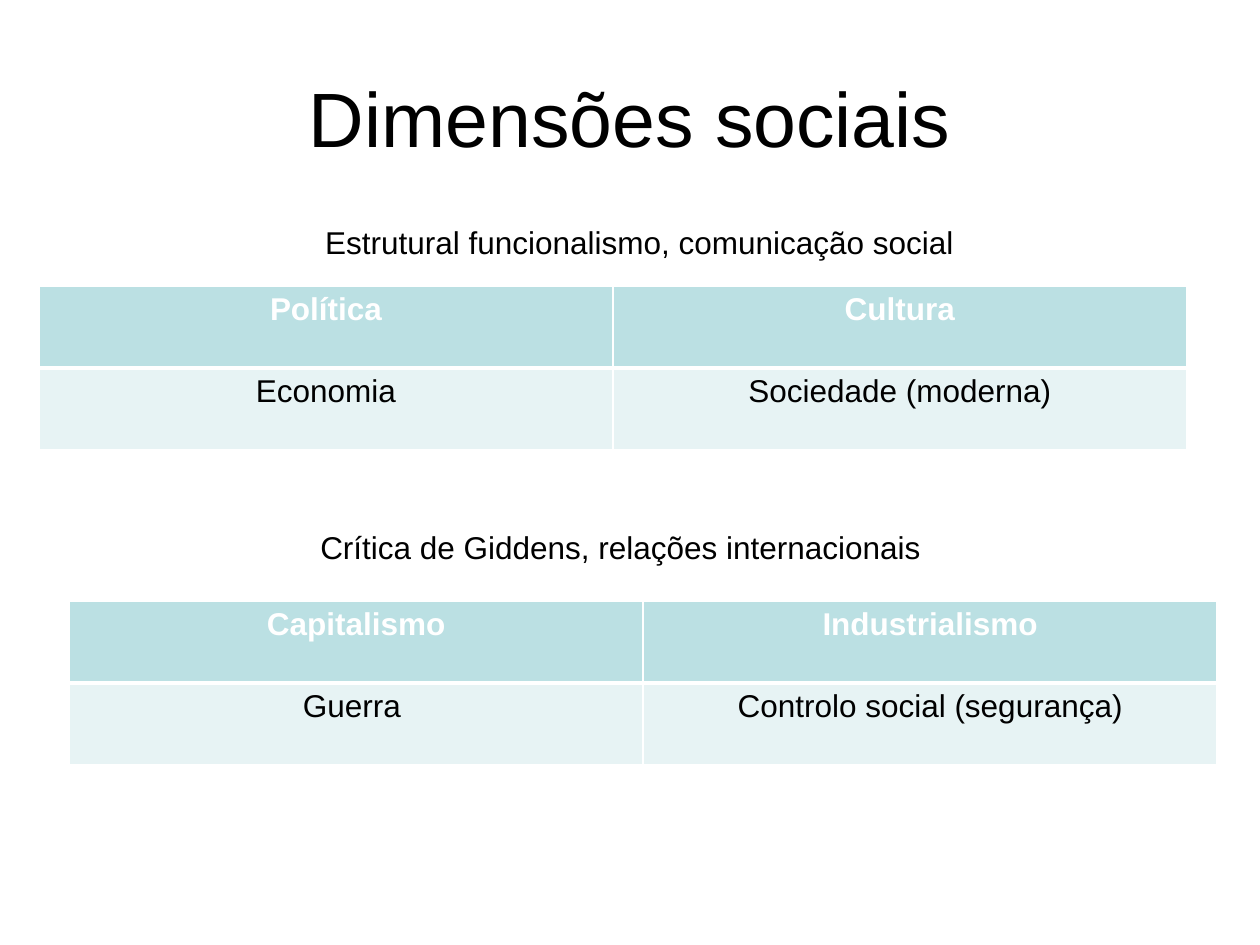
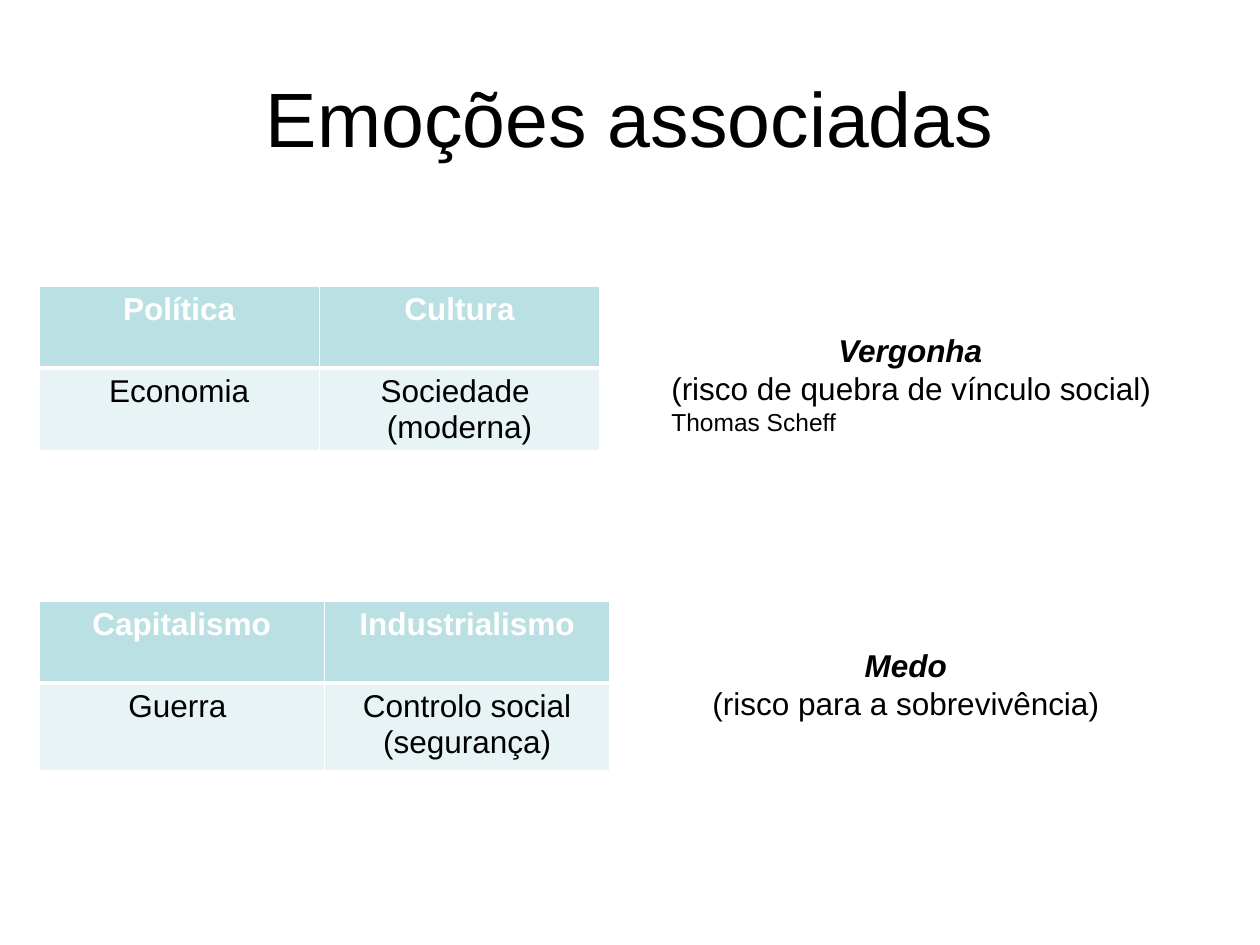
from lxml.etree import SubElement
from pptx import Presentation
from pptx.dml.color import RGBColor
from pptx.enum.text import MSO_ANCHOR, MSO_AUTO_SIZE, PP_ALIGN
from pptx.oxml.ns import qn
from pptx.util import Inches, Pt

# Shared look
FONT = "Arial"
BLACK = RGBColor(0x00, 0x00, 0x00)
WHITE = RGBColor(0xFF, 0xFF, 0xFF)
HEADER = RGBColor(0xBB, 0xE0, 0xE3)
BODY = RGBColor(0xE7, 0xF3, 0xF4)
TITLE_SIZE, TEXT_SIZE, NOTE_SIZE = 44, 18, 14

# Slide grid: 100 columns by 75 rows
W, H = Inches(10), Inches(7.5)
COL, ROW = W / 100, H / 75
TITLE_BOX = (5, 3, 90, 12.5)
TABLE_TOPS = (22.7, 47.7)
TABLE_ROW = 6.5


def place(box):
    """Turn a box in columns and rows into slide lengths."""
    x, y, w, h = box
    return round(x * COL), round(y * ROW), round(w * COL), round(h * ROW)


def style(p, size=TEXT_SIZE, color=BLACK, bold=False, italic=False,
          align=PP_ALIGN.CENTER):
    p.alignment = align
    for r in p.runs:
        r.font.name, r.font.size = FONT, Pt(size)
        r.font.bold, r.font.italic = bold, italic
        r.font.color.rgb = color


def add_titled_slide(prs, title):
    s = prs.slides.add_slide(prs.slide_layouts[5])
    sp = s.shapes.title
    sp.left, sp.top, sp.width, sp.height = place(TITLE_BOX)
    tf = sp.text_frame
    tf.text = title
    tf.vertical_anchor = MSO_ANCHOR.MIDDLE
    style(tf.paragraphs[0], TITLE_SIZE)
    return s


def add_text(s, box, lines):
    """Add a text box; each line is its text and its style."""
    tf = s.shapes.add_textbox(*place(box)).text_frame
    tf.word_wrap = True
    tf.auto_size = MSO_AUTO_SIZE.SHAPE_TO_FIT_TEXT
    tf.text = "\n".join(text for text, _ in lines)
    for p, (_, look) in zip(tf.paragraphs, lines):
        style(p, **look)


def set_borders(cell, widths):
    tcPr = cell._tc.get_or_add_tcPr()
    for i, (side, width) in enumerate(widths.items()):
        ln = SubElement(tcPr, qn(f"a:ln{side}"), w=str(Pt(width)))
        fill = SubElement(ln, qn("a:solidFill"))
        SubElement(fill, qn("a:srgbClr"), val=str(WHITE))
        tcPr.insert(i, ln)


def add_dimensions(s, x, y, width, rows):
    """Add a two-by-two table with a header row."""
    box = place((x, y, width, len(rows) * TABLE_ROW))
    table = s.shapes.add_table(len(rows), 2, *box).table
    table.horz_banding = False
    for i, row in enumerate(rows):
        head = i == 0
        for j, text in enumerate(row):
            cell = table.cell(i, j)
            cell.text = text
            cell.fill.solid()
            cell.fill.fore_color.rgb = HEADER if head else BODY
            set_borders(cell, {"L": 1, "R": 1, "T": 1 if head else 3,
                               "B": 3 if head else 1})
            for p in cell.text_frame.paragraphs:
                style(p, color=WHITE if head else BLACK, bold=head)


def social_dimensions(prs, functionalism, critique):
    s = add_titled_slide(prs, "Dimensões sociais")
    parts = (
        (3.1, functionalism, (14.8, 17.2, 71.9, 4),
         "Estrutural funcionalismo, comunicação social"),
        (5.5, critique, (13.3, 41.4, 71.9, 4),
         "Crítica de Giddens, relações internacionais"),
    )
    for top, (x, rows, box, caption) in zip(TABLE_TOPS, parts):
        add_text(s, box, [(caption, {})])
        add_dimensions(s, x, top, 91.1, rows)


def linked_emotions(prs, functionalism, critique):
    s = add_titled_slide(prs, "Emoções associadas")
    emotion = {"bold": True, "italic": True}
    left = {"align": PP_ALIGN.LEFT}
    parts = (
        (44.5, functionalism, (52.3, 9.4),
         [("Vergonha ", emotion),
          ("(risco de quebra de vínculo social)", left),
          ("Thomas Scheff", {"size": NOTE_SIZE, **left})]),
        (45.3, critique, (51.6, 7.1),
         [("Medo", emotion), ("(risco para a sobrevivência)", {})]),
    )
    for top, (width, rows, (x, height), lines) in zip(TABLE_TOPS, parts):
        add_dimensions(s, 3.1, top, width, rows)
        # The emotion sits beside its table, slightly below the top
        add_text(s, (x, top + 3.1, 40.6, height), lines)


def main():
    prs = Presentation()
    prs.slide_width, prs.slide_height = W, H
    politics = ("Política", "Cultura")
    critique = [("Capitalismo", "Industrialismo"),
                ("Guerra ", "Controlo social (segurança)")]
    social_dimensions(
        prs, [politics, ("Economia", "Sociedade (moderna)")], critique)
    linked_emotions(
        prs, [politics, ("Economia", "Sociedade \n(moderna)")], critique)
    prs.save("out.pptx")


if __name__ == "__main__":
    main()
